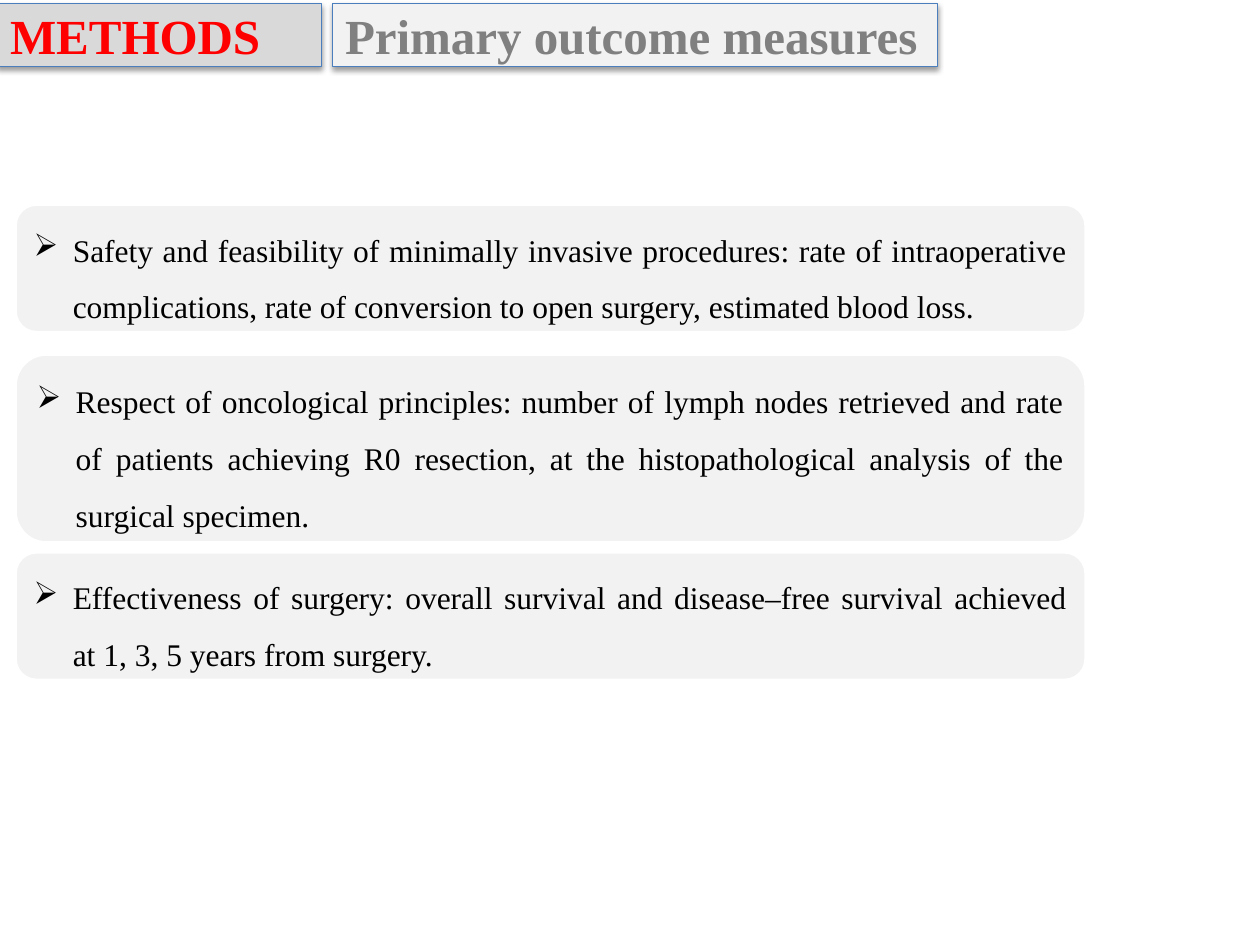
"""Build the slide on primary outcome measures."""
from dataclasses import dataclass

from lxml.etree import SubElement
from pptx import Presentation
from pptx.dml.color import RGBColor
from pptx.enum.shapes import MSO_SHAPE as Preset
from pptx.enum.text import MSO_ANCHOR as Anchor, MSO_AUTO_SIZE as AutoSize, PP_ALIGN as Align
from pptx.oxml.ns import qn
from pptx.util import Inches, Pt

FONT = "Times New Roman"
HEADER_TOP, HEADER_HEIGHT = 0.03, 0.5
CARD_LEFT, CARD_WIDTH = 0.12, 8.5
INDENT = 0.31


@dataclass
class Header:
    text: str
    left: float
    width: float
    fill: str
    color: str
    align: Align


@dataclass
class Outcome:
    text: str
    top: float
    height: float


HEADING = Header("METHODS", -0.02, 2.57, "D9D9D9", "FF0000", Align.LEFT)
SUBHEADING = Header("Primary outcome measures", 2.64, 4.8, "F2F2F2", "808080", Align.JUSTIFY)
OUTCOMES = [
    Outcome("Safety and feasibility of minimally invasive procedures: rate of intraoperative "
            "complications, rate of conversion to open surgery, estimated blood loss.", 1.62, 1.02),
    Outcome("Respect of oncological principles: number of lymph nodes retrieved and rate of "
            "patients achieving R0 resection, at the histopathological analysis of the "
            "surgical specimen.", 2.81, 1.5),
    Outcome("Effectiveness of surgery: overall survival and disease–free survival achieved "
            "at 1, 3, 5 years from surgery.", 4.38, 1.02),
]


def rgb(value: str) -> RGBColor:
    return RGBColor.from_string(value)


def style_box(box, fill: str, line: str, line_width: float) -> None:
    box.fill.solid()
    box.fill.fore_color.rgb = rgb(fill)
    box.line.color.rgb = rgb(line)
    box.line.width = Pt(line_width)
    box.shadow.inherit = False
    frame = box.text_frame
    frame.word_wrap = True
    frame.auto_size = AutoSize.NONE
    frame.vertical_anchor = Anchor.MIDDLE


def add_span(para, text: str, size: float, color: str, bold: bool = False) -> None:
    span = para.add_run()
    span.text = text
    span.font.name = FONT
    span.font.size = Pt(size)
    span.font.bold = bold
    span.font.color.rgb = rgb(color)


def add_shadow(box) -> None:
    effects = box._element.spPr.find(qn("a:effectLst"))
    shadow = SubElement(effects, qn("a:outerShdw"), blurRad=str(Pt(3.1)), dist=str(Pt(1.6)),
                        dir="5400000", rotWithShape="0")
    color = SubElement(shadow, qn("a:srgbClr"), val="000000")
    SubElement(color, qn("a:alpha"), val="38000")


def add_bullet(para) -> None:
    props = para._p.get_or_add_pPr()
    props.set("marL", str(Inches(INDENT)))
    props.set("indent", str(Inches(-INDENT)))
    SubElement(props, qn("a:buChar"), char="➢")


def format_header(box, header: Header) -> None:
    box.left, box.top = Inches(header.left), Inches(HEADER_TOP)
    box.width, box.height = Inches(header.width), Inches(HEADER_HEIGHT)
    style_box(box, header.fill, "4B7EBC", 0.75)
    add_shadow(box)
    para = box.text_frame.paragraphs[0]
    para.alignment = header.align
    add_span(para, header.text, 28, header.color, bold=True)


def add_outcome(page, outcome: Outcome) -> None:
    box = page.shapes.add_shape(Preset.ROUNDED_RECTANGLE, Inches(CARD_LEFT), Inches(outcome.top),
                                Inches(CARD_WIDTH), Inches(outcome.height))
    style_box(box, "F2F2F2", "FFFFFF", 2)
    para = box.text_frame.paragraphs[0]
    add_bullet(para)
    para.alignment = Align.JUSTIFY
    para.line_spacing = 1.5
    add_span(para, outcome.text, 18, "000000")


def main() -> None:
    deck = Presentation()
    deck.slide_width, deck.slide_height = Inches(10), Inches(7.5)
    page = deck.slides.add_slide(deck.slide_layouts[5])
    format_header(page.shapes.title, HEADING)
    format_header(page.shapes.add_shape(Preset.RECTANGLE, 0, 0, 0, 0), SUBHEADING)
    for outcome in OUTCOMES:
        add_outcome(page, outcome)
    deck.save("out.pptx")


if __name__ == "__main__":
    main()
